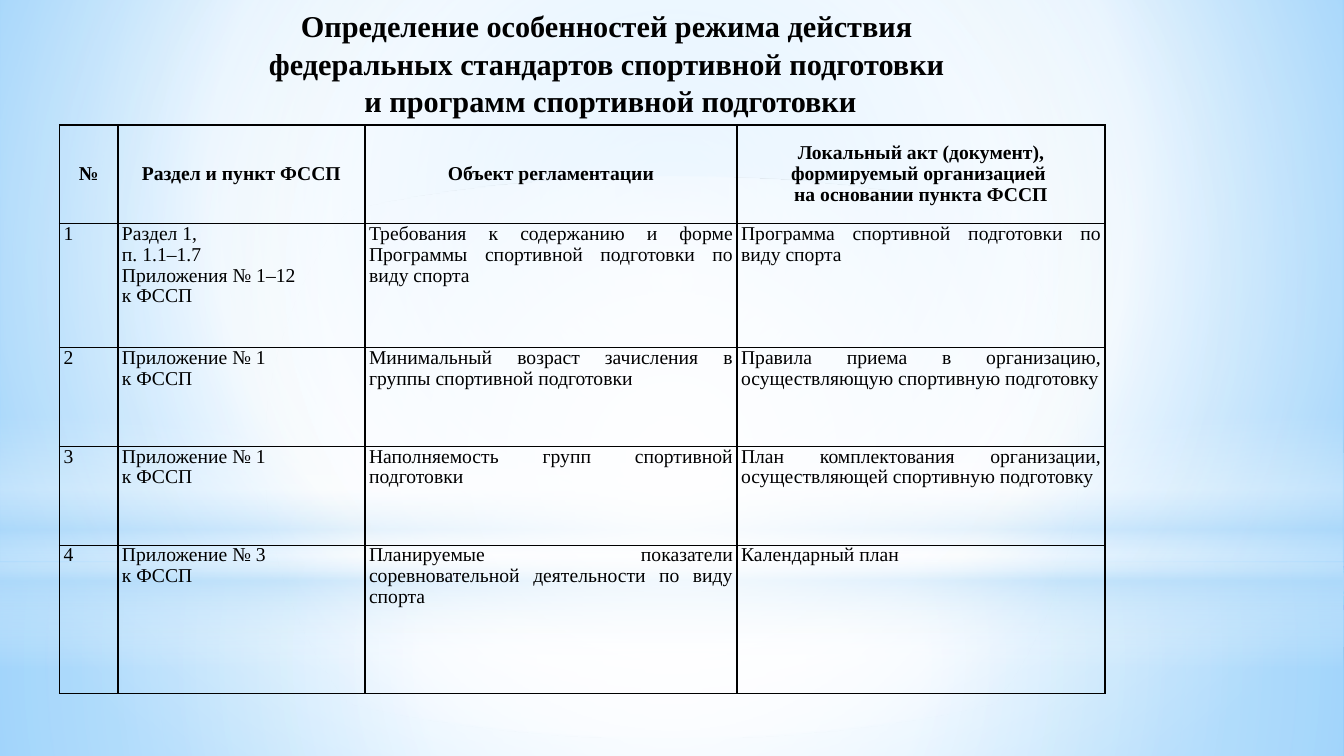
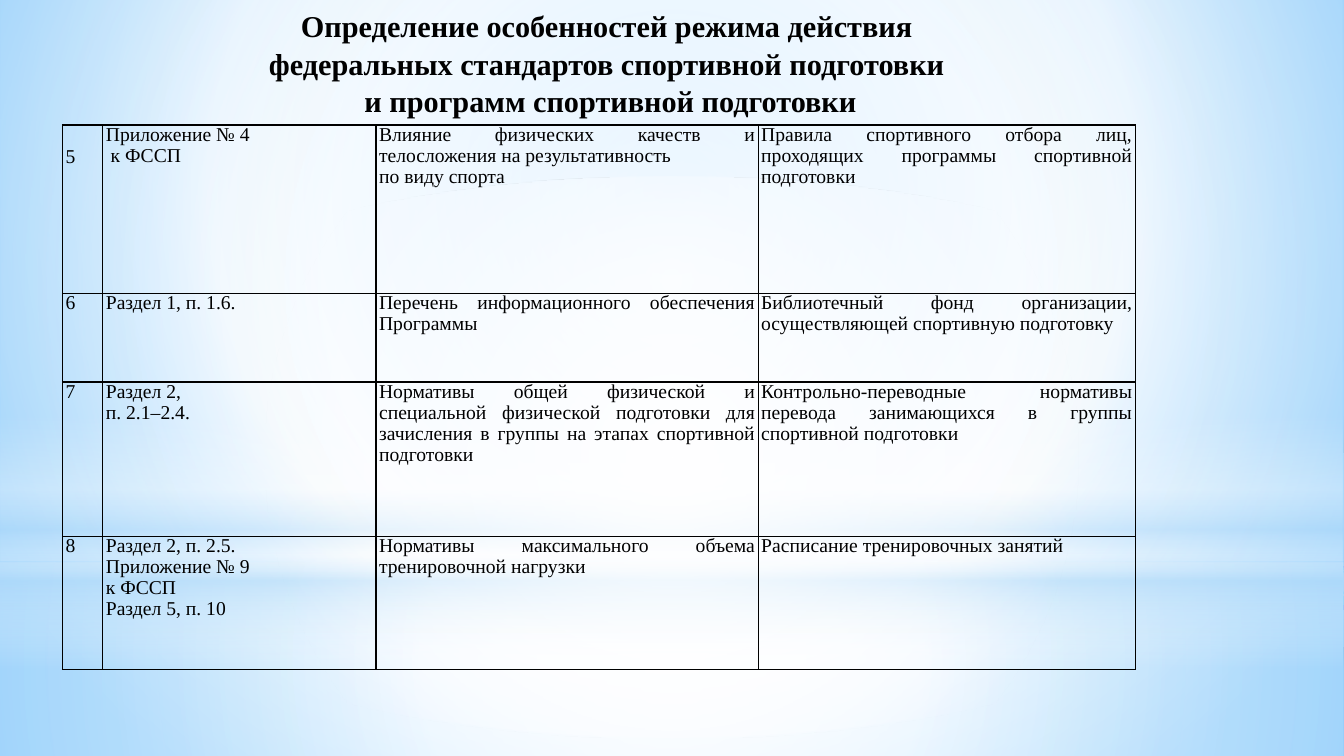
from lxml.etree import SubElement as Sub, Element
from pptx import Presentation
from pptx.dml.color import RGBColor as Rgb
from pptx.enum.shapes import MSO_SHAPE as Geo
from pptx.enum.text import MSO_ANCHOR as Anchor, PP_ALIGN as Align
from pptx.oxml.ns import qn
from pptx.util import Inches, Pt

HUE = {"ink": "000000", "white": "FFFFFF", "mist": "B4DCFA",
       "sky": "9ED5FF", "deep": "5BB9FF"}
FONT = "Times New Roman"
MID = (50, 50, 50, 50)
TITLE = ("Определение особенностей режима действия \v"
         "федеральных стандартов спортивной подготовки \v"
         "и программ спортивной подготовки")
SKY = [(0, "sky", 100), (60, "white", 100), (100, "deep", 100)]
BANDS = [
    (Geo.RECTANGLE, 5.58, 1.92, MID,
     [(0, "white", 91), (37, "white", 76), (100, "mist", 79)]),
    (Geo.RECTANGLE, 0, 5.58, MID,
     [(0, "white", 89), (48, "white", 62), (100, "mist", 79)]),
    (Geo.RECTANGLE, 4.12, 2.5, None,
     [(0, "white", 0), (29, "white", 30), (45, "mist", 40),
      (55, "white", 26), (65, "mist", 60), (100, "white", 0)]),
    (Geo.OVAL, 1.75, 5.58, MID, [(0, "white", 100), (56, "white", 0)]),
]
HEAD = ["№", "Раздел и пункт ФССП", "Объект регламентации",
        "Локальный акт (документ), формируемый организацией \n"
        "на основании пункта ФССП"]
FIRST = [
    HEAD,
    ["1", "Раздел 1, \vп. 1.1–1.7\nПриложения № 1–12\nк ФССП",
     "Требования к содержанию и форме Программы спортивной подготовки по виду спорта",
     "Программа спортивной подготовки по виду спорта"],
    ["2", "Приложение № 1\nк ФССП",
     "Минимальный возраст зачисления в группы спортивной подготовки",
     "Правила приема в организацию, осуществляющую спортивную подготовку"],
    ["3", "Приложение № 1\nк ФССП",
     "Наполняемость групп спортивной подготовки",
     "План комплектования организации, осуществляющей спортивную подготовку"],
    ["4", "Приложение № 3\nк ФССП",
     "Планируемые показатели соревновательной деятельности по виду спорта",
     "Календарный план"],
]
SECOND = [
    ["5", "Приложение № 4\n к ФССП",
     "Влияние физических качеств и телосложения на результативность \nпо виду спорта",
     "Правила спортивного отбора лиц, проходящих программы спортивной подготовки"],
    ["6", "Раздел 1, п. 1.6.",
     "Перечень информационного обеспечения Программы",
     "Библиотечный фонд организации, осуществляющей спортивную подготовку"],
    ["7", "Раздел 2, \vп. 2.1–2.4.",
     "Нормативы общей физической и специальной физической подготовки "
     "для зачисления в группы на этапах спортивной подготовки",
     "Контрольно-переводные нормативы перевода занимающихся "
     "в группы спортивной подготовки"],
    ["8", "Раздел 2, п. 2.5.\nПриложение № 9\nк ФССП\nРаздел 5, п. 10",
     "Нормативы максимального объема тренировочной нагрузки",
     "Расписание тренировочных занятий"],
]


def shade(fill, root, stops, focus):
    """Give a fill a gradient, round about focus or else straight down."""
    fill.solid()
    old = root.find(qn("a:solidFill"))
    grad = Element(qn("a:gradFill"), rotWithShape="1")
    row = Sub(grad, qn("a:gsLst"))
    for pos, name, alpha in stops:
        stop = Sub(row, qn("a:gs"), pos=str(pos * 1000))
        tint = Sub(stop, qn("a:srgbClr"), val=HUE[name])
        if alpha < 100:
            Sub(tint, qn("a:alpha"), val=str(alpha * 1000))
    if focus:
        ring = Sub(grad, qn("a:path"), path="circle")
        sides = {side: str(part * 1000) for side, part in zip("ltrb", focus)}
        Sub(ring, qn("a:fillToRect"), **sides)
    else:
        Sub(grad, qn("a:lin"), ang="5400000", scaled="0")
    root.replace(old, grad)


def paint(deck):
    """Set the sky on the master."""
    master = deck.slide_master
    fill = master.background.fill
    fill.solid()
    shade(fill, master.element.find(".//" + qn("p:bgPr")), SKY, (20, 10, 20, 60))


def scene(slide, wide):
    """Lay the glowing bands over the sky."""
    for geo, top, high, focus, stops in BANDS:
        band = slide.shapes.add_shape(geo, 0, Inches(top), wide, Inches(high))
        band.shadow.inherit = False
        band.line.fill.background()
        shade(band.fill, band._element.spPr, stops, focus)


def write(frame, text, size, bold, align, pitch):
    """Write paragraphs parted by newlines and lines parted by tabs."""
    for num, part in enumerate(text.split("\n")):
        para = frame.add_paragraph() if num else frame.paragraphs[0]
        para.alignment = align
        para.line_spacing = pitch
        for spot, line in enumerate(part.split("\v")):
            if spot:
                para.add_line_break()
            run = para.add_run()
            run.text = line
            font = run.font
            font.name, font.size, font.bold = FONT, Pt(size), bold
            font.color.rgb = Rgb.from_string(HUE["ink"])


def title(slide, left, top, wide, high):
    """Place the shared heading."""
    box = slide.shapes.add_textbox(*map(Inches, (left, top, wide, high)))
    frame = box.text_frame
    frame.word_wrap = True
    frame.vertical_anchor = Anchor.MIDDLE
    write(frame, TITLE, 21.6, True, Align.CENTER, 1.03)


def edge(cell):
    """Draw the four borders of a cell."""
    props = cell._tc.get_or_add_tcPr()
    for num, side in enumerate("LRTB"):
        line = Element(qn("a:ln" + side), w=str(Pt(1)))
        tint = Sub(Sub(line, qn("a:solidFill")), qn("a:srgbClr"))
        tint.set("val", HUE["ink"])
        props.insert(num, line)


def grid(slide, left, top, cols, rows, data, inset):
    """Place a ruled table, with a bold head where data has one."""
    size = map(Inches, (left, top, sum(cols), sum(rows)))
    table = slide.shapes.add_table(len(rows), len(cols), *size).table
    table.first_row = table.horz_banding = False
    for col, wide in zip(table.columns, cols):
        col.width = Inches(wide)
    for row, high, texts in zip(table.rows, rows, data):
        row.height = Inches(high)
        head = texts is HEAD
        for num, (cell, text) in enumerate(zip(row.cells, texts)):
            cell.margin_left = cell.margin_right = Inches(inset)
            cell.margin_top = cell.margin_bottom = 0
            cell.vertical_anchor = Anchor.MIDDLE if head else Anchor.TOP
            cell.fill.background()
            edge(cell)
            side = Align.LEFT if num == 1 else Align.JUSTIFY
            write(cell.text_frame, text, 14, head,
                  Align.CENTER if head else side, 0.96)
    return table


def page(deck, *plan):
    """Add a slide with scene, heading and table."""
    slide = deck.slides.add_slide(deck.slide_layouts[6])
    scene(slide, deck.slide_width)
    title(slide, 0, 0, 12.11, 1.24)
    return grid(slide, *plan)


def main():
    """Build the deck."""
    deck = Presentation()
    deck.slide_width, deck.slide_height = Inches(13.33), Inches(7.5)
    paint(deck)
    page(deck, 0.59, 1.24, [0.58, 2.45, 3.69, 3.65],
         [0.98, 1.23, 0.98, 0.98, 1.47], FIRST, 0.04)
    table = page(deck, 0.62, 1.24, [0.4, 2.71, 3.79, 3.74],
                 [1.67, 0.88, 1.53, 1.32], SECOND, 0.03)
    table.cell(0, 0).margin_top = Inches(0.22)
    deck.save("out.pptx")


if __name__ == "__main__":
    main()
